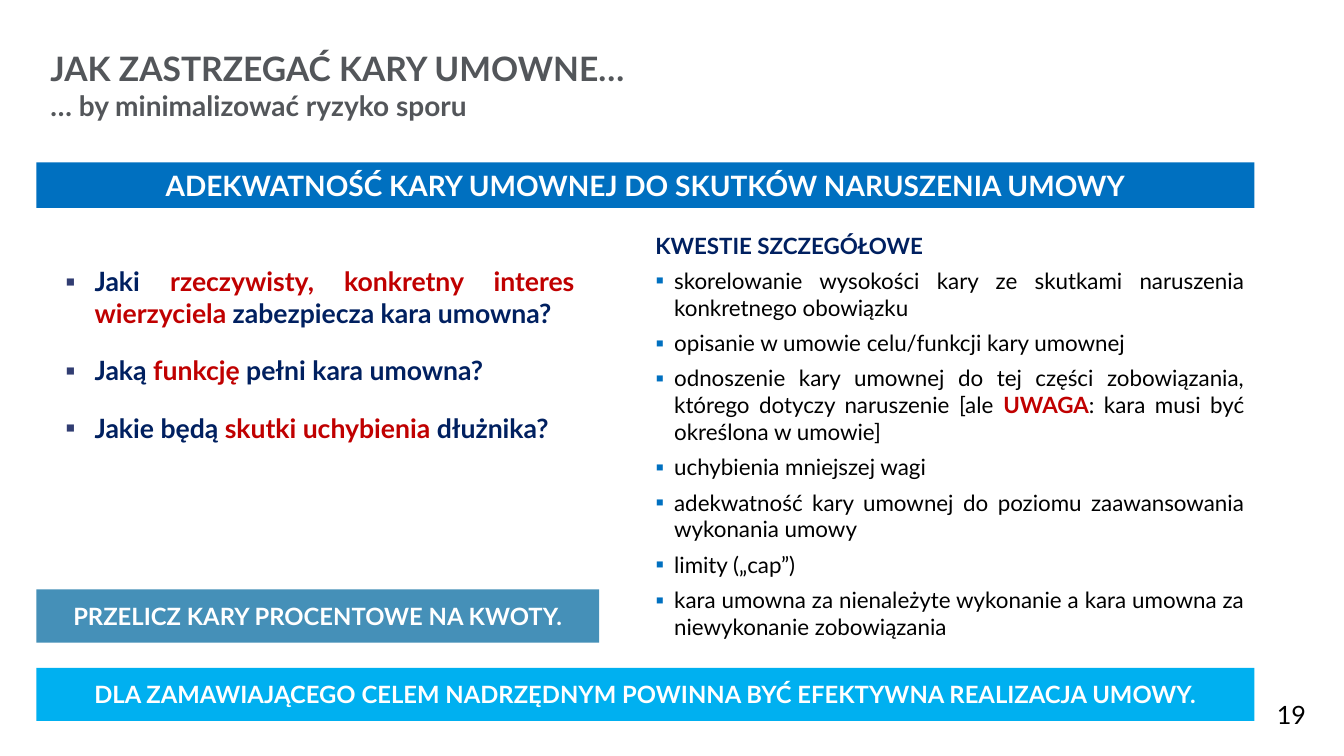
from lxml.etree import SubElement
from pptx import Presentation
from pptx.dml.color import RGBColor
from pptx.enum.shapes import MSO_SHAPE as Shape
from pptx.enum.text import MSO_ANCHOR as Anchor, PP_ALIGN as Align
from pptx.oxml.ns import qn
from pptx.util import Pt

NAVY, RED, BLACK, WHITE = "002060", "C00000", "000000", "FFFFFF"
GREY, BLUE, STEEL, SKY, INDIGO = "53565A", "0070C0", "4590B8", "00B0F0", "313D72"


def color(value):
    return RGBColor.from_string(value)


class SlideBuilder:
    font = "Lato"

    def __init__(self, page):
        self.page = page

    def add_spans(self, para, spans, size, ink, bold):
        """Add spans: plain strings, or (text, color, bold) for emphasis."""
        for item in spans:
            text, shade, heavy = (item, ink, bold) if isinstance(item, str) else item
            span = para.add_run()
            span.text = text
            span.font.name = self.font
            span.font.size = Pt(size)
            span.font.bold = heavy
            span.font.color.rgb = color(shade)

    def text_box(self, left, top, width, height, margins=True):
        box = self.page.shapes.add_textbox(Pt(left), Pt(top), Pt(width), Pt(height))
        frame = box.text_frame
        frame.word_wrap = True
        if not margins:
            frame.margin_left = frame.margin_right = Pt(0)
            frame.margin_top = frame.margin_bottom = Pt(0)
        return frame

    def line(self, frame, spans, size, ink, bold=False, after=0, first=False):
        para = frame.paragraphs[0] if first else frame.add_paragraph()
        para.space_after = Pt(after)
        self.add_spans(para, spans, size, ink, bold)
        return para

    def bullets(self, frame, items, size, ink, mark, indent, after, bold=False, first=False):
        for index, spans in enumerate(items):
            para = self.line(frame, spans, size, ink, bold, after, first and index == 0)
            para.alignment = Align.JUSTIFY
            props = para._p.get_or_add_pPr()
            props.set("marL", str(Pt(indent)))
            props.set("indent", str(-Pt(indent)))
            shade = SubElement(props, qn("a:buClr"))
            SubElement(shade, qn("a:srgbClr")).set("val", mark)
            SubElement(props, qn("a:buFont")).set("typeface", self.font)
            SubElement(props, qn("a:buChar")).set("char", "▪")

    def banner(self, top, width, height, fill, text, size):
        bar = self.page.shapes.add_shape(
            Shape.RECTANGLE, Pt(26), Pt(top), Pt(width), Pt(height))
        bar.shadow.inherit = False
        bar.fill.solid()
        bar.fill.fore_color.rgb = color(fill)
        bar.line.fill.background()
        frame = bar.text_frame
        frame.word_wrap = True
        frame.vertical_anchor = Anchor.MIDDLE
        para = frame.paragraphs[0]
        para.alignment = Align.CENTER
        self.add_spans(para, [text], size, WHITE, True)


def main():
    deck = Presentation()
    deck.slide_width, deck.slide_height = Pt(960), Pt(540)
    slide = SlideBuilder(deck.slides.add_slide(deck.slide_layouts[6]))

    # Page number
    number = slide.text_box(905, 496, 41, 26)
    slide.line(number, ["19"], 18, BLACK, first=True)

    # Title
    title = slide.text_box(36, 34.5, 762, 53, margins=False)
    slide.line(title, ["JAK ZASTRZEGAĆ KARY UMOWNE…"], 24, GREY, bold=True, first=True)
    slide.line(title, ["… by minimalizować ryzyko sporu"], 20, GREY, bold=True)

    slide.banner(116, 870, 32.5, BLUE,
                 "ADEKWATNOŚĆ KARY UMOWNEJ DO SKUTKÓW NARUSZENIA UMOWY", 20)

    # Key questions
    questions = [
        ["Jaki ", ("rzeczywisty, konkretny interes wierzyciela ", RED, True),
         "zabezpiecza kara umowna?"],
        ["Jaką ", ("funkcję", RED, True), " pełni kara umowna?"],
        ["Jakie będą ", ("skutki uchybienia ", RED, True), "dłużnika?"],
    ]
    left_box = slide.text_box(39.5, 186, 378, 156)
    slide.bullets(left_box, questions, 19, NAVY, INDIGO, 21, 18, bold=True, first=True)

    # Detailed issues
    issues = [
        ["skorelowanie wysokości kary ze skutkami naruszenia konkretnego obowiązku"],
        ["opisanie w umowie celu/funkcji kary umownej"],
        ["odnoszenie kary umownej do tej części zobowiązania, "
         "którego dotyczy naruszenie [ale ", ("UWAGA", RED, True),
         ": kara musi być określona w umowie]"],
        ["uchybienia mniejszej wagi"],
        ["adekwatność kary umownej do poziomu zaawansowania wykonania umowy"],
        ["limity („cap”)"],
        ["kara umowna za nienależyte wykonanie a kara umowna za "
         "niewykonanie zobowiązania"],
    ]
    right_box = slide.text_box(461, 162, 435, 313)
    slide.line(right_box, ["KWESTIE SZCZEGÓŁOWE"], 16, NAVY, bold=True, after=6, first=True)
    slide.bullets(right_box, issues, 16, BLACK, BLUE, 13.5, 6)

    # Conclusions
    slide.banner(421, 402, 38, STEEL, "PRZELICZ KARY PROCENTOWE NA KWOTY.", 17)
    slide.banner(477, 870, 38, SKY,
                 "DLA ZAMAWIAJĄCEGO CELEM NADRZĘDNYM POWINNA BYĆ "
                 "EFEKTYWNA REALIZACJA UMOWY.", 17)

    deck.save("out.pptx")


if __name__ == "__main__":
    main()
